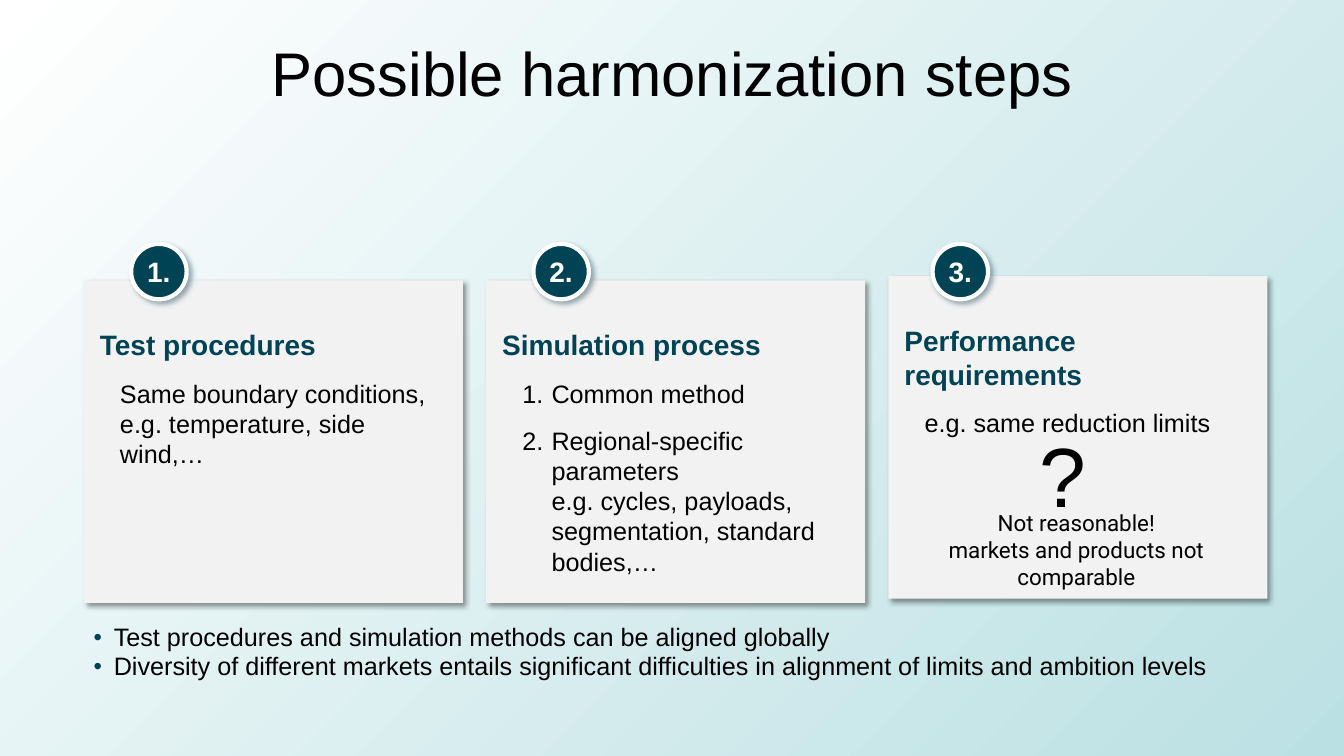
from dataclasses import dataclass
from typing import NamedTuple, Optional

from lxml.etree import SubElement
from pptx import Presentation
from pptx.dml.color import RGBColor
from pptx.enum.shapes import MSO_SHAPE as Preset
from pptx.enum.text import MSO_ANCHOR as Anchor, MSO_AUTO_SIZE as AutoSize, PP_ALIGN as Align
from pptx.oxml.ns import qn
from pptx.util import Emu, Inches, Pt

SLIDE_WIDTH, SLIDE_HEIGHT = Inches(13.33), Inches(7.5)
COLUMN, ROW = SLIDE_WIDTH / 100, SLIDE_HEIGHT / 100
BLACK, WHITE, PETROL, DARK_PETROL = "000000", "FFFFFF", "004355", "003440"
PANEL, MIST = "F2F2F2", "BBE0E3"
CARD_LEFT, CARD_PITCH = 6.23, 29.93


class Area(NamedTuple):
    left: float
    top: float
    width: float
    height: float

    def emu(self) -> tuple:
        return (Emu(round(self.left * COLUMN)), Emu(round(self.top * ROW)),
                Emu(round(self.width * COLUMN)), Emu(round(self.height * ROW)))


@dataclass(frozen=True)
class Line:
    text: str
    size: float = 18
    color: str = BLACK
    font: str = "Arial"
    bold: bool = False
    align: Align = Align.LEFT
    level: int = 0
    after: float = 0
    spacing: Optional[float] = None
    margin: float = 0
    indent: float = 0
    bullet: Optional[str] = None


@dataclass(frozen=True)
class Step:
    heading: str
    details: tuple
    numbered: bool = False
    top: float = 37.07
    badge_shift: float = 3.53


@dataclass(frozen=True)
class Note:
    area: Area
    lines: tuple
    anchor: Anchor = Anchor.TOP


STEPS = (
    Step("Test procedures", ("Same boundary conditions,\ne.g. temperature, side wind,…",)),
    Step("Simulation process",
         ("Common method",
          "Regional-specific parameters\ne.g. cycles, payloads, segmentation, standard bodies,…"),
         numbered=True),
    Step("Performance requirements", ("e.g. same reduction limits",), top=36.53, badge_shift=3.3),
)

NOTES = (
    Note(Area(CARD_LEFT, 81.87, 87.85, 9.07), tuple(
        Line(text, spacing=0.95, margin=0.2, indent=-0.2, bullet="•") for text in (
            "Test procedures and simulation methods can be aligned globally",
            "Diversity of different markets entails significant difficulties"
            " in alignment of limits and ambition levels"))),
    Note(Area(65.87, 66.67, 28.43, 8.53), tuple(
        Line(text, size=16, font="Roboto", align=Align.CENTER) for text in (
            "Not reasonable!", "markets and products not comparable"))),
    Note(Area(75.47, 55.33, 7.28, 14.8),
         (Line("?", size=60, align=Align.CENTER),), Anchor.MIDDLE),
)


def rgb(color: str) -> RGBColor:
    return RGBColor.from_string(color)


def add_bullet(para, line: Line) -> None:
    props = para._p.get_or_add_pPr()
    props.set("marL", str(Inches(line.margin)))
    props.set("indent", str(Inches(line.indent)))
    if line.bullet is None:
        SubElement(props, qn("a:buNone"))
    elif line.bullet == "1.":
        SubElement(props, qn("a:buFont"), typeface="+mj-lt")
        SubElement(props, qn("a:buAutoNum"), type="arabicPeriod")
    else:
        SubElement(SubElement(props, qn("a:buClr")), qn("a:srgbClr"), val=PETROL)
        SubElement(props, qn("a:buSzPct"), val="95000")
        SubElement(props, qn("a:buFont"), typeface="Arial")
        SubElement(props, qn("a:buChar"), char=line.bullet)


def write_lines(frame, lines: tuple) -> None:
    for index, line in enumerate(lines):
        para = frame.add_paragraph() if index else frame.paragraphs[0]
        para.text = line.text.replace("\n", "\v")
        para.alignment = line.align
        para.level = line.level
        para.space_before, para.space_after = Pt(0), Pt(line.after)
        if line.spacing:
            para.line_spacing = line.spacing
        add_bullet(para, line)
        for span in para.runs:
            span.font.name, span.font.size = line.font, Pt(line.size)
            span.font.bold = line.bold
            span.font.color.rgb = rgb(line.color)


def add_shape(page, preset: Preset, area: Area, fill: str, shadow: str):
    shape = page.shapes.add_shape(preset, *area.emu())
    shape.fill.solid()
    shape.fill.fore_color.rgb = rgb(fill)
    shape.line.fill.background()
    shape.shadow.inherit = False
    effects = shape._element.spPr.find(qn("a:effectLst"))
    outer = SubElement(effects, qn("a:outerShdw"), blurRad=str(Pt(4)), dist=str(Pt(3)),
                       dir="2700000", algn="tl", rotWithShape="0")
    tone = SubElement(outer, qn("a:srgbClr"), val=shadow)
    SubElement(tone, qn("a:alpha"), val="40000")
    return shape


def add_card(page, step: Step, left: float) -> None:
    card = add_shape(page, Preset.RECTANGLE, Area(left, step.top, 28.21, 42.67), PANEL, BLACK)
    frame = card.text_frame
    frame.word_wrap = True
    frame.vertical_anchor = Anchor.TOP
    frame.margin_left, frame.margin_top = Inches(0.16), Inches(0.47)
    frame.margin_right, frame.margin_bottom = Inches(0.12), Inches(0.08)
    margin, indent, bullet = (0.49, -0.29, "1.") if step.numbered else (0.2, 0, None)
    heading = Line(step.heading, size=20, color=PETROL, bold=True, after=12)
    details = tuple(Line(text, level=1, after=12, margin=margin, indent=indent, bullet=bullet)
                    for text in step.details)
    write_lines(frame, (heading, *details))


def add_badge(page, number: int, left: float) -> None:
    badge = add_shape(page, Preset.OVAL, Area(left, 32.27, 4.13, 7.33), PETROL, DARK_PETROL)
    badge.line.color.rgb = rgb(WHITE)
    badge.line.width = Pt(3)
    badge.text_frame.word_wrap = False
    badge.text_frame.vertical_anchor = Anchor.MIDDLE
    write_lines(badge.text_frame, (
        Line(f"{number}.", size=20, color=WHITE, bold=True, align=Align.CENTER),))


def add_note(page, note: Note) -> None:
    frame = page.shapes.add_textbox(*note.area.emu()).text_frame
    frame.word_wrap = True
    frame.auto_size = AutoSize.SHAPE_TO_FIT_TEXT
    frame.vertical_anchor = note.anchor
    write_lines(frame, note.lines)


def paint_background(page) -> None:
    fill = page.background.fill
    fill.gradient()
    fill.gradient_angle = 315
    for stop, color in zip(fill.gradient_stops, (WHITE, MIST)):
        stop.color.rgb = rgb(color)


def set_title(page, text: str) -> None:
    title = page.shapes.title
    title.left, title.top, title.width, title.height = Area(5.03, 4, 90.02, 16.67).emu()
    title.text_frame.auto_size = AutoSize.NONE
    title.text_frame.vertical_anchor = Anchor.TOP
    write_lines(title.text_frame, (Line(text, size=44, align=Align.CENTER),))


def main() -> None:
    deck = Presentation()
    deck.slide_width, deck.slide_height = SLIDE_WIDTH, SLIDE_HEIGHT
    page = deck.slides.add_slide(deck.slide_layouts.get_by_name("Title Only"))
    paint_background(page)
    set_title(page, "Possible harmonization steps")
    for index, step in enumerate(STEPS):
        left = CARD_LEFT + index * CARD_PITCH
        add_card(page, step, left)
        add_badge(page, index + 1, left + step.badge_shift)
    for note in NOTES:
        add_note(page, note)
    deck.save("out.pptx")


if __name__ == "__main__":
    main()
